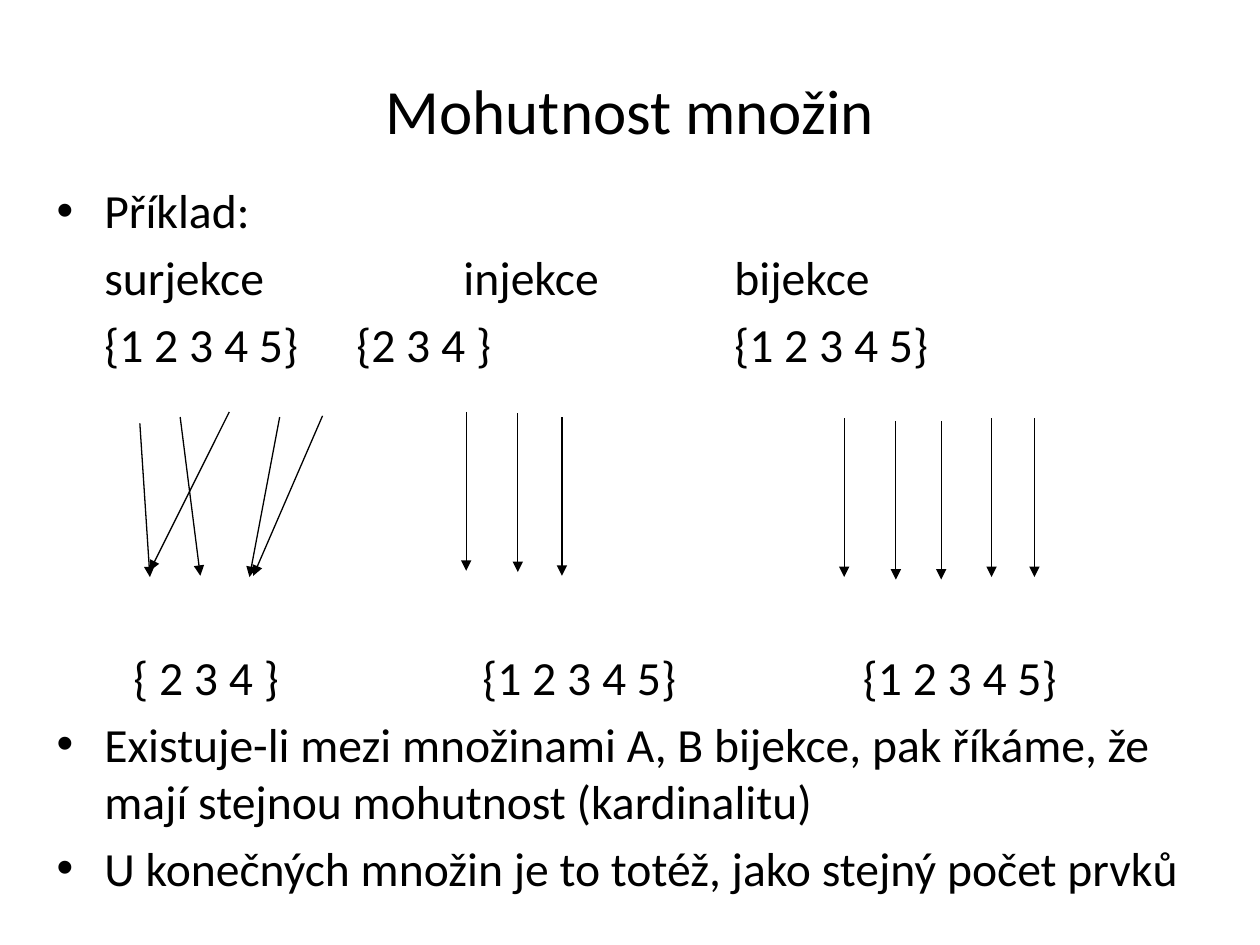
from lxml import etree
from pptx import Presentation
from pptx.dml.color import RGBColor
from pptx.enum.shapes import MSO_CONNECTOR
from pptx.enum.text import MSO_ANCHOR, PP_ALIGN
from pptx.oxml.ns import qn
from pptx.util import Inches, Pt

STRAIGHT = MSO_CONNECTOR.STRAIGHT
MIDDLE = MSO_ANCHOR.MIDDLE
CENTER = PP_ALIGN.CENTER
FONT = "Calibri"
BLACK = "000000"

deck = Presentation()
deck.slide_width, deck.slide_height = Inches(10), Inches(7.5)
column, row = deck.slide_width / 100, deck.slide_height / 75
page = deck.slides.add_slide(deck.slide_layouts[5])


def color(hex_string):
    return RGBColor.from_string(hex_string)


def write(para, text, size=27.2, before=5.4, align=None, bullet=False, tabs=()):
    """Fill a paragraph; tabs are stops in columns from the text's left edge."""
    span = para.add_run()
    span.text = text
    span.font.name, span.font.size = FONT, Pt(size)
    span.font.color.rgb = color(BLACK)
    para.alignment = align
    para.space_before = Pt(before)
    properties = para._p.get_or_add_pPr()
    if bullet:
        indent = round(3.8 * column)
        properties.set("marL", str(indent))
        properties.set("indent", str(-indent))
        etree.SubElement(properties, qn("a:buFont"), typeface="Arial")
        etree.SubElement(properties, qn("a:buChar"), char="•")
    if tabs:
        stops = etree.SubElement(properties, qn("a:tabLst"))
        for stop in tabs:
            etree.SubElement(stops, qn("a:tab"), pos=str(round(stop * column)), algn="l")


title = page.shapes.title
title.left, title.top = round(5 * column), round(5 * row)
title.width, title.height = round(90 * column), round(7.3 * row)
title.text_frame.vertical_anchor = MIDDLE
write(title.text_frame.paragraphs[0], "Mohutnost množin", size=36, before=0, align=CENTER)

body = page.shapes.add_textbox(
    round(3.5 * column), round(13.9 * row), round(91.5 * column), round(55.9 * row))
frame = body.text_frame
frame.word_wrap = True
lines = [
    ("Příklad:", dict(bullet=True)),
    ("\tsurjekce\tinjekce\tbijekce", dict(tabs=(3.8, 32.3, 53.8))),
    ("\t{1 2 3 4 5}\t{2 3 4 }\t{1 2 3 4 5}", dict(tabs=(3.8, 23.8, 53.8))),
    ("\t{ 2 3 4 }\t{1 2 3 4 5}\t{1 2 3 4 5}", dict(tabs=(6.1, 33.8, 64), before=158)),
    ("Existuje-li mezi množinami A, B bijekce, pak říkáme, že mají stejnou "
     "mohutnost (kardinalitu)", dict(bullet=True)),
    ("U konečných množin je to totéž, jako stejný počet prvků", dict(bullet=True)),
]
for index, (text, style) in enumerate(lines):
    para = frame.add_paragraph() if index else frame.paragraphs[0]
    write(para, text, **style)

# Each arrow: start column, start row, end column, end row
surjection = [
    (11.1, 33.6, 11.9, 45.8), (18.2, 32.7, 11.9, 45.3), (14.3, 33.1, 15.9, 45.7),
    (22.2, 33.1, 19.8, 45.8), (25.6, 33, 20.1, 45.7),
]
arrow_length = 12.6
vertical_starts = [
    (37, 32.7), (41.1, 32.8), (44.6, 33.1),
    (67, 33.2), (71.1, 33.4), (74.7, 33.4), (78.7, 33.2), (82.1, 33.2),
]
vertical = [(x, y, x, y + arrow_length) for x, y in vertical_starts]

for start_x, start_y, end_x, end_y in surjection + vertical:
    arrow = page.shapes.add_connector(
        STRAIGHT, round(start_x * column), round(start_y * row),
        round(end_x * column), round(end_y * row))
    arrow.line.color.rgb = color(BLACK)
    arrow.line.width = Pt(0.75)
    etree.SubElement(arrow.line._get_or_add_ln(), qn("a:tailEnd"), type="triangle")
    etree.SubElement(arrow._element.spPr, qn("a:effectLst"))

deck.save("out.pptx")
